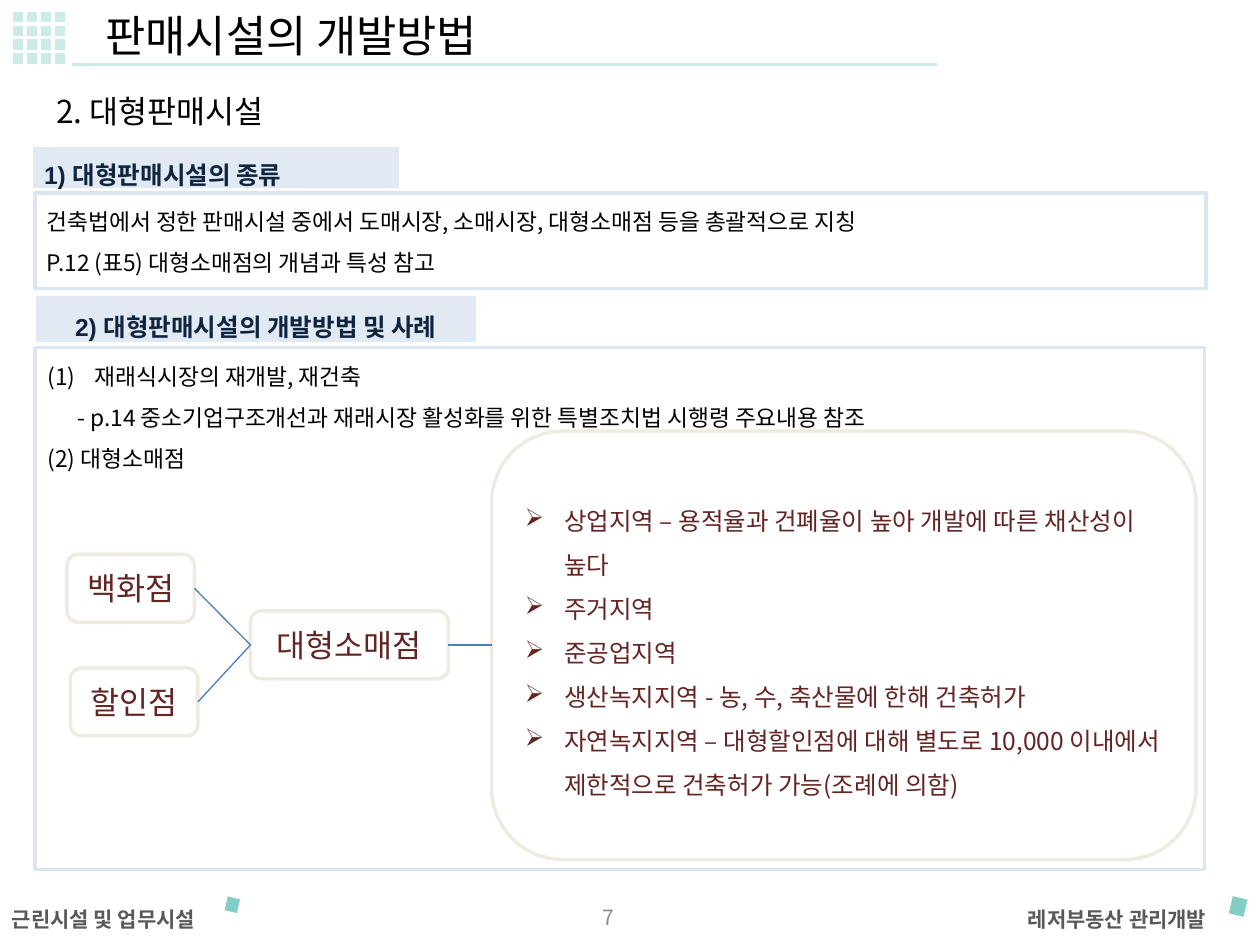
from itertools import product

from lxml.etree import SubElement
from pptx import Presentation
from pptx.dml.color import RGBColor
from pptx.enum.shapes import MSO_CONNECTOR, MSO_SHAPE
from pptx.enum.text import MSO_ANCHOR, PP_ALIGN
from pptx.oxml.ns import qn
from pptx.util import Cm, Pt

BLACK = RGBColor(0x00, 0x00, 0x00)
WHITE = RGBColor(0xFF, 0xFF, 0xFF)
TEAL = RGBColor(0x44, 0xB6, 0xAB)
BLUE = RGBColor(0x4F, 0x81, 0xBD)
PALE_BLUE = RGBColor(0xDC, 0xE6, 0xF2)
LINK_BLUE = RGBColor(0x4B, 0x7E, 0xBC)
NAVY = RGBColor(0x0F, 0x24, 0x3E)
BEIGE = RGBColor(0xEE, 0xEC, 0xE1)
MAROON = RGBColor(0x63, 0x25, 0x23)
DARK_GRAY = RGBColor(0x59, 0x59, 0x59)
GRAY = RGBColor(0x8C, 0x8C, 0x8C)
KOREAN_FONT = "Noto Sans CJK KR"


def write(paragraph, text, size=13, color=BLACK, bold=False, font=KOREAN_FONT,
          align=PP_ALIGN.LEFT, spacing=1.0, margin=0, hanging=0,
          bullet=None, numbering=None):
    """Fill a paragraph; margin and hanging are in centimetres."""
    paragraph.alignment = align
    paragraph.line_spacing = spacing
    properties = paragraph._p.get_or_add_pPr()
    properties.set("marL", str(Cm(margin)))
    properties.set("indent", str(-Cm(hanging)))
    if bullet:
        SubElement(properties, qn("a:buChar"), char=bullet)
    elif numbering:
        SubElement(properties, qn("a:buAutoNum"), type=numbering)
    else:
        SubElement(properties, qn("a:buNone"))
    run = paragraph.add_run()
    run.text = text
    run.font.size = Pt(size)
    run.font.bold = bold
    run.font.color.rgb = color
    run.font.name = font
    SubElement(run._r.get_or_add_rPr(), qn("a:ea"), typeface=KOREAN_FONT)


class SlideBuilder:
    def __init__(self, slide):
        self.slide = slide
        self.line_width = Pt(2)

    def text(self, box, *lines, anchor=MSO_ANCHOR.TOP, left_inset=0.25,
             right_inset=0.25, **style):
        frame = self.slide.shapes.add_textbox(*map(Cm, box)).text_frame
        frame.margin_left, frame.margin_right = Cm(left_inset), Cm(right_inset)
        self.fill_frame(frame, lines, anchor, style)

    def fill_frame(self, frame, lines, anchor, style):
        """Write lines, each a string or a (string, own format) pair."""
        frame.word_wrap = True
        frame.vertical_anchor = anchor
        for index, line in enumerate(lines):
            text, own = (line, {}) if isinstance(line, str) else line
            paragraph = frame.add_paragraph() if index else frame.paragraphs[0]
            write(paragraph, text, **{**style, **own})

    def shape(self, box, *lines, kind=MSO_SHAPE.RECTANGLE, fill=None,
              opacity=None, outline=WHITE, rotation=0, **style):
        shape = self.slide.shapes.add_shape(kind, *map(Cm, box))
        shape.shadow.inherit = False
        shape.rotation = rotation
        if fill is None:
            shape.fill.background()
        else:
            shape.fill.solid()
            shape.fill.fore_color.rgb = fill
        if opacity:
            fill_color = next(shape._element.iter(qn("a:srgbClr")))
            SubElement(fill_color, qn("a:alpha"), val=str(opacity * 1000))
        shape.line.color.rgb = outline
        shape.line.width = self.line_width
        if lines:
            self.fill_frame(shape.text_frame, lines, MSO_ANCHOR.MIDDLE, style)

    def card(self, box, *lines, **style):
        self.shape(box, *lines, kind=MSO_SHAPE.ROUNDED_RECTANGLE, fill=WHITE,
                   outline=BEIGE, color=MAROON, **style)

    def heading(self, box, text, **style):
        self.shape(box, text, fill=BLUE, opacity=17, size=14, color=NAVY,
                   bold=True, font="Arial", spacing=1.5, **style)

    def link(self, start, end):
        line = self.slide.shapes.add_connector(
            MSO_CONNECTOR.STRAIGHT, *map(Cm, (*start, *end)))
        line.line.color.rgb = LINK_BLUE
        line.line.width = Pt(0.75)
        SubElement(line._element.spPr, qn("a:effectLst"))


def add_footer(page):
    style = dict(size=12, color=DARK_GRAY, bold=True)
    page.text((-0.41, 18.16, 5.31, 0.76), "근린시설 및 업무시설",
              left_inset=0.65, right_inset=0, **style)
    page.text((18.85, 18.16, 6.27, 0.76), "레저부동산 관리개발",
              right_inset=0.8, align=PP_ALIGN.RIGHT, **style)
    for box in ((4.52, 18.06, 0.33, 0.36), (24.77, 18.06, 0.38, 0.43)):
        page.shape(box, fill=TEAL, opacity=66, rotation=13.3)
    page.text((9.3, 17.98, 5.92, 1.02), "7", size=12, color=GRAY,
              align=PP_ALIGN.CENTER, anchor=MSO_ANCHOR.MIDDLE)


def add_title(page):
    tile = 0.28
    for row, column in product(range(4), repeat=2):
        page.shape((0.23 + column * tile, 0.2 + row * tile, tile, tile),
                   fill=TEAL, opacity=27)
    page.shape((1.42, 1.24, 17.5, 0.13), fill=TEAL, opacity=27)
    page.text((1.88, 0.05, 9.73, 1.32), "판매시설의 개발방법", size=25)
    page.text((0.89, 1.73, 5.21, 1.02), "2. 대형판매시설", size=18)


def add_sections(page):
    page.heading((0.64, 2.92, 7.44, 0.91), "1) 대형판매시설의 종류")
    page.shape((0.71, 3.89, 23.6, 1.93), outline=PALE_BLUE)
    page.text((0.69, 3.78, 23.6, 1.93),
              "건축법에서 정한 판매시설 중에서 도매시장, 소매시장, 대형소매점 등을 총괄적으로 지칭",
              "P.12 (표5) 대형소매점의 개념과 특성 참고", spacing=1.5)
    page.heading((0.69, 5.94, 8.94, 0.99), "2) 대형판매시설의 개발방법 및 사례",
                 align=PP_ALIGN.CENTER)
    page.shape((0.71, 7.01, 23.57, 10.52), outline=PALE_BLUE)
    page.text((0.71, 6.91, 23.57, 3.58),
              ("재래식시장의 재개발, 재건축",
               dict(margin=0.95, hanging=0.95, numbering="arabicParenBoth")),
              ("- p.14 중소기업구조개선과 재래시장 활성화를 위한 특별조치법 시행령 주요내용 참조",
               dict(margin=0.6)),
              "(2) 대형소매점", spacing=1.5)


def add_store_diagram(page):
    card_height = 1.37
    hub_left, hub_width, panel_left, middle = 5.05, 3.99, 9.91, 13.0
    hub = (hub_left, middle)
    name_style = dict(size=18, align=PP_ALIGN.CENTER)
    page.card((hub_left, middle - card_height / 2, hub_width, card_height),
              "대형소매점", **name_style)
    store_width = 2.57
    for name, left, center in (("백화점", 1.35, 11.86), ("할인점", 1.42, 14.15)):
        page.card((left, center - card_height / 2, store_width, card_height),
                  name, **name_style)
        page.link((left + store_width, center), hub)
    page.card((panel_left, 8.69, 14.2, 8.64),
              "상업지역 – 용적율과 건폐율이 높아 개발에 따른 채산성이 높다",
              "주거지역",
              "준공업지역",
              "생산녹지지역 - 농, 수, 축산물에 한해 건축허가",
              "자연녹지지역 – 대형할인점에 대해 별도로 10,000 이내에서 "
              "제한적으로 건축허가 가능(조례에 의함)",
              size=14, spacing=1.5, margin=0.79, hanging=0.79, bullet="➢")
    page.link((hub_left + hub_width, middle), (panel_left, middle))


def main():
    deck = Presentation()
    deck.slide_width, deck.slide_height = Cm(25.4), Cm(19.05)
    page = SlideBuilder(deck.slides.add_slide(deck.slide_layouts[6]))
    add_footer(page)
    add_title(page)
    add_sections(page)
    add_store_diagram(page)
    deck.save("out.pptx")


if __name__ == "__main__":
    main()
